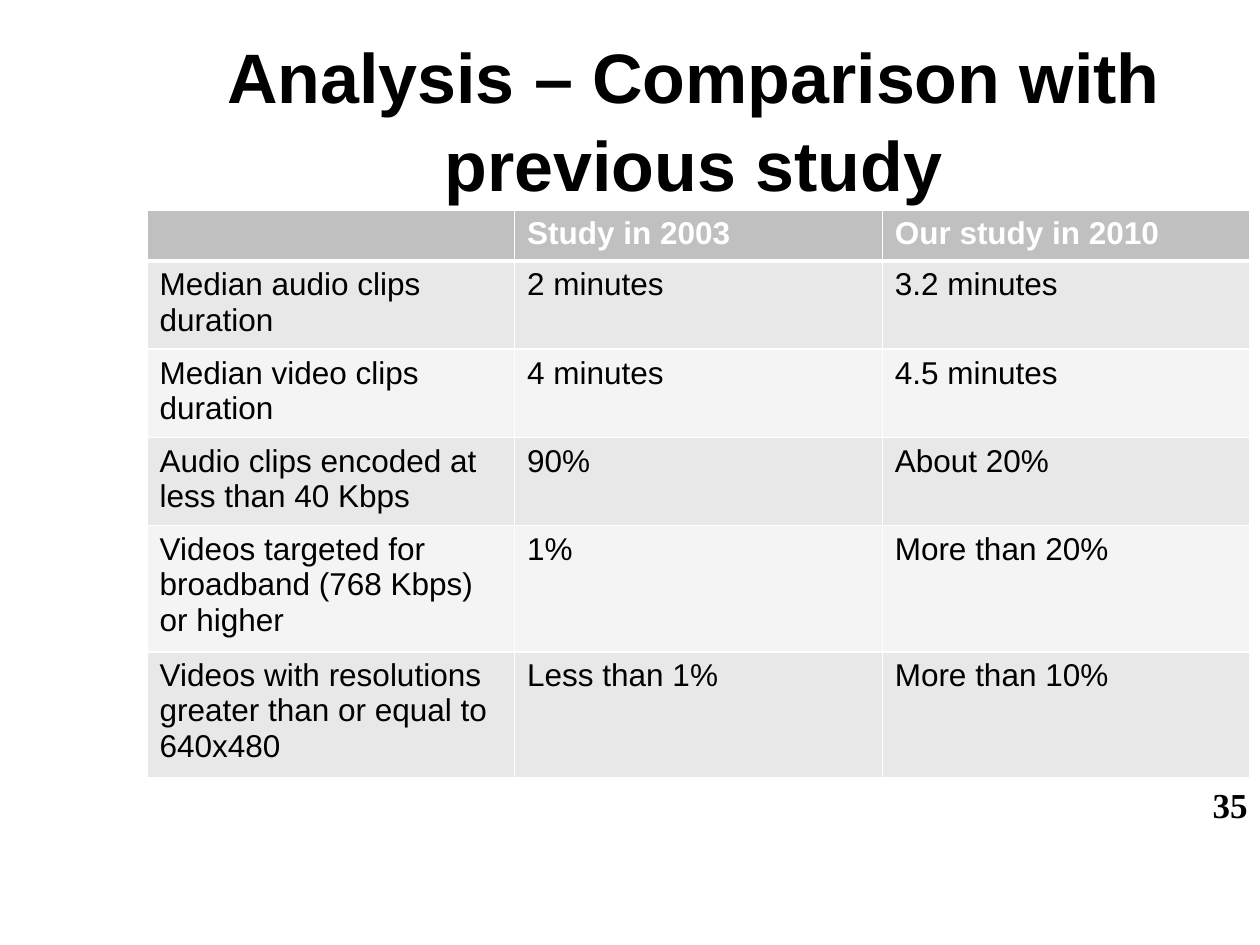
from lxml.etree import SubElement
from pptx import Presentation
from pptx.dml.color import RGBColor
from pptx.enum.text import MSO_ANCHOR, PP_ALIGN
from pptx.oxml.ns import qn
from pptx.util import Emu, Pt

EMU_PER_PX = 914400 / 126
COMPARISON = [
    ("", "Study in 2003", "Our study in 2010"),
    ("Median audio clips duration", "2 minutes", "3.2 minutes"),
    ("Median video clips duration", "4 minutes", "4.5 minutes"),
    ("Audio clips encoded at less than 40 Kbps", "90%", "About 20%"),
    ("Videos targeted for broadband (768 Kbps) or higher", "1%", "More than 20%"),
    ("Videos with resolutions greater than or equal to 640x480", "Less than 1%", "More than 10%"),
]
ROW_HEIGHTS = [51, 83, 83, 83, 118, 118]


def px(length):
    """Turn pixels into EMU."""
    return Emu(round(length * EMU_PER_PX))


def color(value):
    """Turn a hex string into a colour."""
    return RGBColor.from_string(value)


def style(paragraph, size, font_name, hex_color, bold):
    """Format every run of a paragraph."""
    for run in paragraph.runs:
        run.font.size = Pt(size)
        run.font.name = font_name
        run.font.bold = bold
        run.font.color.rgb = color(hex_color)


def add_label(slide, box, text, size, font_name, align, anchor, spacing):
    """Place one bold black paragraph in a box."""
    frame = slide.shapes.add_textbox(*map(px, box)).text_frame
    frame.word_wrap = True
    frame.vertical_anchor = anchor
    frame.text = text
    paragraph = frame.paragraphs[0]
    paragraph.alignment = align
    paragraph.line_spacing = spacing
    style(paragraph, size, font_name, "000000", True)


def add_title(slide, box):
    """Place the slide heading."""
    add_label(slide, box, "Analysis – Comparison with previous study", 40, "Arial",
              PP_ALIGN.CENTER, MSO_ANCHOR.MIDDLE, 1.05)


def add_page_number(slide, box):
    """Place the page number."""
    add_label(slide, box, "35", 20, "Times New Roman", PP_ALIGN.RIGHT, MSO_ANCHOR.TOP, 1.0)


def add_borders(cell, widths):
    """Draw white cell borders, with widths in points by side."""
    properties = cell._tc.get_or_add_tcPr()
    for side, width in widths.items():
        line = SubElement(properties, qn(f"a:ln{side}"), w=str(Pt(width)))
        fill = SubElement(line, qn("a:solidFill"))
        SubElement(fill, qn("a:srgbClr"), val="FFFFFF")


def add_comparison(slide, box):
    """Place the table that compares the two studies."""
    column_count = len(COMPARISON[0])
    table = slide.shapes.add_table(len(COMPARISON), column_count, *map(px, box)).table
    for column in table.columns:
        column.width = px(box[2] / column_count)
    for index, (values, height) in enumerate(zip(COMPARISON, ROW_HEIGHTS)):
        table.rows[index].height = px(height)
        header = index == 0
        band = "C0C0C0" if header else "E8E8E8" if index % 2 else "F4F4F4"
        top, bottom = (3 if index == 1 else 1), (3 if header else 1)
        for cell, value in zip(table.rows[index].cells, values):
            add_borders(cell, {"L": 1, "R": 1, "T": top, "B": bottom})
            cell.fill.solid()
            cell.fill.fore_color.rgb = color(band)
            cell.text = value
            style(cell.text_frame.paragraphs[0], 18, "Arial",
                  "FFFFFF" if header else "000000", header)


def main():
    """Build and save the slide."""
    presentation = Presentation()
    presentation.slide_width, presentation.slide_height = px(1260), px(945)
    slide = presentation.slides.add_slide(presentation.slide_layouts[6])
    add_title(slide, (158, 38, 1071, 158))
    add_comparison(slide, (147, 210, 1103, sum(ROW_HEIGHTS)))
    add_page_number(slide, (1191, 777, 69, 66))
    presentation.save("out.pptx")


if __name__ == "__main__":
    main()
